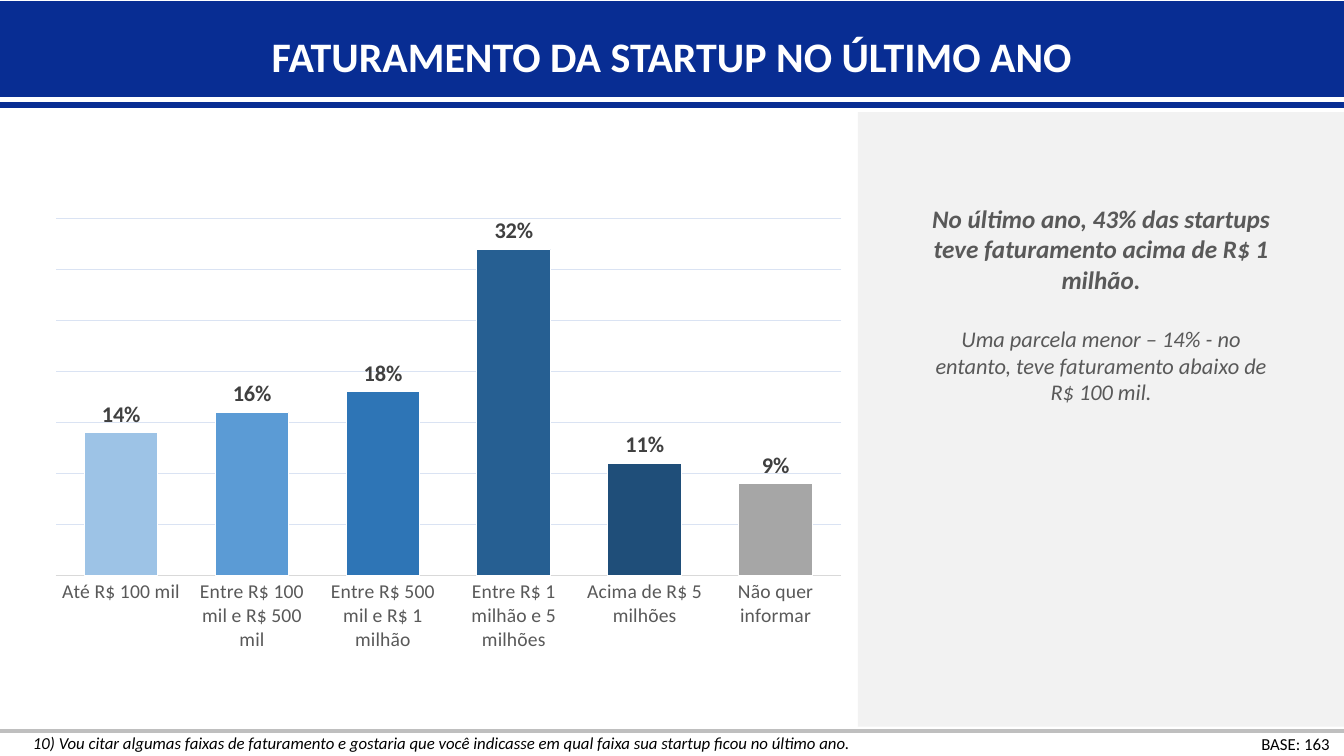
from lxml import etree
from pptx import Presentation
from pptx import util as u
from pptx.chart.data import CategoryChartData
from pptx.dml.color import RGBColor
from pptx.enum import chart as ch, shapes, text
from pptx.oxml import parse_xml
from pptx.oxml.ns import nsdecls, qn

WIDTH, HEIGHT = 33.87, 19.05
BLUE, PANEL, RULE, GREY = "082D93", "F2F2F2", "BFBFBF", "595959"
LEFT, CENTER, RIGHT = (text.PP_ALIGN.LEFT, text.PP_ALIGN.CENTER,
                       text.PP_ALIGN.RIGHT)

REVENUE = [
    ("Até R$ 100 mil", 0.14, "9DC3E6"),
    ("Entre R$ 100 mil e R$ 500 mil", 0.16, "5B9BD5"),
    ("Entre R$ 500 mil e R$ 1 milhão", 0.18, "2E75B6"),
    ("Entre R$ 1 milhão e 5 milhões", 0.32, "265F92"),
    ("Acima de R$ 5 milhões", 0.11, "1F4E79"),
    ("Não quer informar", 0.09, "A6A6A6"),
]


def rgb(value):
    return RGBColor.from_string(value)


def box(*lengths):
    return [u.Cm(n) for n in lengths]


def set_font(font, color, size, **style):
    font.color.rgb = rgb(color)
    for name, value in {"name": "Calibri", "size": u.Pt(size), **style}.items():
        setattr(font, name, value)


def set_line(line, color, width):
    line.color.rgb = rgb(color)
    line.width = u.Pt(width)


class Deck:
    def __init__(self):
        self.prs = Presentation()
        self.prs.slide_width, self.prs.slide_height = box(WIDTH, HEIGHT)
        self.s = self.prs.slides.add_slide(self.prs.slide_layouts[6])

    def rect(self, at, color):
        sp = self.s.shapes.add_shape(shapes.MSO_SHAPE.RECTANGLE, *box(*at))
        sp.shadow.inherit = False
        sp.fill.solid()
        sp.fill.fore_color.rgb = rgb(color)
        sp.line.fill.background()
        return sp

    def rule(self, y, color):
        """Draw a horizontal line across the whole slide."""
        sp = self.s.shapes.add_connector(
            shapes.MSO_CONNECTOR.STRAIGHT, *box(0, y, WIDTH, y))
        set_line(sp.line, color, 3)
        etree.SubElement(sp._element.spPr, qn("a:effectLst"))

    def fill_text(self, tf, paragraphs, align):
        """Fill a text frame with (text, color, size, font style) paragraphs."""
        tf.word_wrap = True
        for i, (words, color, size, style) in enumerate(paragraphs):
            p = tf.add_paragraph() if i else tf.paragraphs[0]
            p.alignment = align
            if i:
                p.space_before = u.Pt(22)
            r = p.add_run()
            r.text = words
            set_font(r.font, color, size, **style)

    def text(self, at, paragraphs, align=LEFT):
        sp = self.s.shapes.add_textbox(*box(*at))
        self.fill_text(sp.text_frame, paragraphs, align)

    def title(self, at, words):
        tf = self.rect(at, BLUE).text_frame
        tf.vertical_anchor = text.MSO_ANCHOR.MIDDLE
        self.fill_text(tf, [(words, "FFFFFF", 30, {"bold": True})], CENTER)

    def columns(self, at, rows):
        names, values, colors = zip(*rows)
        data = CategoryChartData(number_format="0%")
        data.categories = names
        data.add_series("Faturamento", values)
        chart = self.s.shapes.add_chart(
            ch.XL_CHART_TYPE.COLUMN_CLUSTERED, *box(*at), data).chart
        chart.has_legend = chart.has_title = False
        set_font(chart.font, "000000", 10)
        self.axes(chart)
        self.plot_area(chart, x=0.02, y=0.02, w=0.96, h=0.79)

        plot = chart.plots[0]
        plot.gap_width, plot.vary_by_categories = 78, False
        plot.has_data_labels = True
        labels = plot.data_labels
        options = {"show_value": True, "number_format": "0%",
                   "number_format_is_linked": False,
                   "position": ch.XL_LABEL_POSITION.OUTSIDE_END}
        for name, value in options.items():
            setattr(labels, name, value)
        set_font(labels.font, "404040", 16, bold=True)
        for i, color in enumerate(colors):
            bar = plot.series[0].points[i].format
            bar.fill.solid()
            bar.fill.fore_color.rgb = rgb(color)
            set_line(bar.line, "FFFFFF", 0.75)

    def axes(self, chart):
        cat, val = chart.category_axis, chart.value_axis
        cat.major_tick_mark = ch.XL_TICK_MARK.NONE
        set_font(cat.tick_labels.font, GREY, 14)
        set_line(cat.format.line, "D9D9D9", 0.75)
        options = {"minimum_scale": 0, "maximum_scale": 0.35,
                   "major_unit": 0.05, "has_major_gridlines": True,
                   "visible": False}
        for name, value in options.items():
            setattr(val, name, value)
        set_line(val.major_gridlines.format.line, "DAE3F3", 0.75)

    def plot_area(self, chart, **fractions):
        """Fix the inner plot area as fractions of the chart frame."""
        sizes = "".join(f'<c:{k} val="{v}"/>' for k, v in fractions.items())
        layout = parse_xml(
            f'<c:layout {nsdecls("c")}><c:manualLayout>'
            '<c:layoutTarget val="inner"/><c:xMode val="edge"/>'
            f'<c:yMode val="edge"/>{sizes}</c:manualLayout></c:layout>')
        area = chart._chartSpace.chart.plotArea
        for old in area.findall(qn("c:layout")):
            area.remove(old)
        area.insert(0, layout)


def main():
    deck = Deck()
    deck.rect((21.62, 2.51, 12.25, 15.8), PANEL)
    deck.title((0, 0.03, WIDTH, 2.74), "FATURAMENTO DA STARTUP NO ÚLTIMO ANO")
    for y, color in [(2.77, "FFFFFF"), (2.51, "FFFFFF"), (18.42, RULE)]:
        deck.rule(y, color)
    deck.text((0.58, 18.34, 33.27, 0.76), [
        ("10) Vou citar algumas faixas de faturamento e gostaria que você "
         "indicasse em qual faixa sua startup ficou no último ano.",
         "000000", 12, {"italic": True})])
    deck.text((23.24, 5, 9.02, 7.44), [
        ("No último ano, 43% das startups teve faturamento acima de "
         "R$ 1 milhão.", GREY, 18, {"bold": True, "italic": True}),
        ("Uma parcela menor – 14% - no entanto, teve faturamento abaixo de "
         "R$ 100 mil.", GREY, 16, {"italic": True})], CENTER)
    deck.text((29.24, 18.36, 4.52, 0.76),
              [("BASE: 163", "000000", 12, {})], RIGHT)
    deck.columns((0.99, 5.28, 20.62, 11.38), REVENUE)
    deck.prs.save("out.pptx")


if __name__ == "__main__":
    main()
